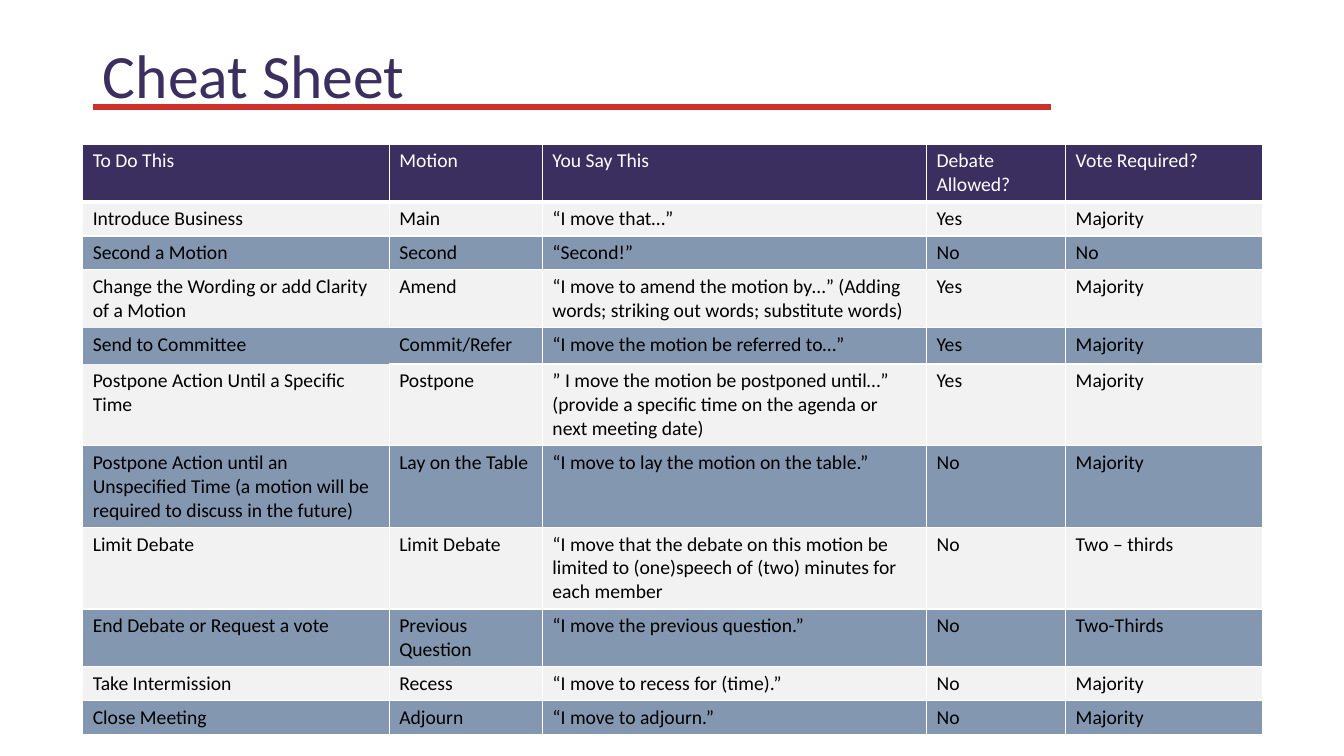
import pptx
import pptx.dml.color
import pptx.enum.shapes
import pptx.enum.text
import pptx.oxml.ns
import pptx.util
from lxml import etree

Inches = pptx.util.Inches
Pt = pptx.util.Pt
qn = pptx.oxml.ns.qn

PURPLE, RED, WHITE, BLACK = "3B2F5F", "D0302C", "FFFFFF", "000000"
PALE, SLATE = "F2F2F2", "8497B0"

HEADS = ["To Do This", "Motion", "You Say This", "Debate Allowed?", "Vote Required?"]
MOTIONS = [
    ["Introduce Business", "Main", "“I move that…”", "Yes", "Majority"],
    ["Second a Motion", "Second", "“Second!”", "No", "No"],
    ["Change the Wording or add Clarity of a Motion", "Amend",
     "“I move to amend the motion by…” (Adding words; striking out words; substitute words)",
     "Yes", "Majority"],
    ["Send to Committee", "Commit/Refer", "“I move the motion be referred to…”",
     "Yes", "Majority"],
    ["Postpone Action Until a Specific Time", "Postpone",
     "” I move the motion be postponed until…” (provide a specific time on the agenda "
     "or next meeting date)", "Yes", "Majority"],
    ["Postpone Action until an Unspecified Time (a motion will be required to discuss "
     "in the future)", "Lay on the Table", "“I move to lay the motion on the table.”",
     "No", "Majority"],
    ["Limit Debate", "Limit Debate",
     "“I move that the debate on this motion be limited to (one)speech of (two) minutes "
     "for each member", "No", "Two – thirds"],
    ["End Debate or Request a vote", "Previous Question",
     "“I move the previous question.”", "No", "Two-Thirds"],
    ["Take Intermission", "Recess", "“I move to recess for (time).”", "No", "Majority"],
    ["Close Meeting", "Adjourn", "“I move to adjourn.”", "No", "Majority"],
]
WIDTHS = [3.04, 1.52, 3.81, 1.38, 1.95]
HEIGHTS = [0.36, 0.21, 0.21, 0.52, 0.36, 0.52, 0.67, 0.52, 0.36, 0.21, 0.21]

# Cell sides without a border, around "Send to Committee"
OPEN = {(3, 0): "B", (4, 0): "LRTB", (4, 1): "L", (5, 0): "T"}


def color(code):
    return pptx.dml.color.RGBColor.from_string(code)


def write(frame, text, size=14, fill=BLACK, font="Calibri", space=None):
    para = frame.paragraphs[0]
    if space:
        para.line_spacing = space
    run = para.add_run()
    run.text = text
    run.font.name = font
    run.font.size = Pt(size)
    run.font.color.rgb = color(fill)


def border(cell, side, width, code=WHITE):
    props = cell._tc.get_or_add_tcPr()
    line = etree.SubElement(props, qn("a:ln" + side), w=str(Pt(width)))
    if width:
        paint = etree.SubElement(line, qn("a:solidFill"))
        etree.SubElement(paint, qn("a:srgbClr"), val=code)
    else:
        etree.SubElement(line, qn("a:noFill"))


class Sheet:
    def __init__(self, deck):
        self.slide = deck.slides.add_slide(deck.slide_layouts[5])

    def title(self, text, left, top, width, height):
        shape = self.slide.shapes.title
        shape.left, shape.top = Inches(left), Inches(top)
        shape.width, shape.height = Inches(width), Inches(height)
        frame = shape.text_frame
        frame.word_wrap = True
        frame.vertical_anchor = pptx.enum.text.MSO_ANCHOR.MIDDLE
        write(frame, text, size=44, fill=PURPLE, space=0.9)
        frame.paragraphs[0].alignment = pptx.enum.text.PP_ALIGN.LEFT

    def table(self, rows, left, top, widths, heights):
        grid = self.slide.shapes.add_table(
            len(rows), len(widths), Inches(left), Inches(top),
            Inches(sum(widths)), Inches(sum(heights))).table
        grid.first_row = grid.horz_banding = False
        for col, width in zip(grid.columns, widths):
            col.width = Inches(width)
        for row, height in zip(grid.rows, heights):
            row.height = Inches(height)
        for r, row in enumerate(rows):
            for c, text in enumerate(row):
                self.cell(grid.cell(r, c), text, r, c)

    def cell(self, cell, text, r, c):
        head = r == 0
        for side in "LRTB":
            width = 3 if head and side == "B" else 1
            border(cell, side, 0 if side in OPEN.get((r, c), "") else width)
        cell.fill.solid()
        cell.fill.fore_color.rgb = color(PURPLE if head else PALE if r % 2 else SLATE)
        write(cell.text_frame, text, fill=WHITE if head else BLACK)

    def line(self, x1, y1, x2, y2, code, width):
        rule = self.slide.shapes.add_connector(
            pptx.enum.shapes.MSO_CONNECTOR.STRAIGHT,
            Inches(x1), Inches(y1), Inches(x2), Inches(y2))
        rule.line.color.rgb = color(code)
        rule.line.width = Pt(width)
        etree.SubElement(rule._element.spPr, qn("a:effectLst"))


def main():
    deck = pptx.Presentation()
    deck.slide_width, deck.slide_height = Inches(13.33), Inches(7.5)
    sheet = Sheet(deck)

    # Heading
    sheet.title("Cheat Sheet", 0.92, 0.05, 11.5, 1.45)

    # Table of motions
    sheet.table([HEADS] + MOTIONS, 0.82, 1.43, WIDTHS, HEIGHTS)

    # Rule under the heading
    sheet.line(10.42, 1.06, 0.92, 1.06, RED, 4)

    deck.save("out.pptx")


if __name__ == "__main__":
    main()
